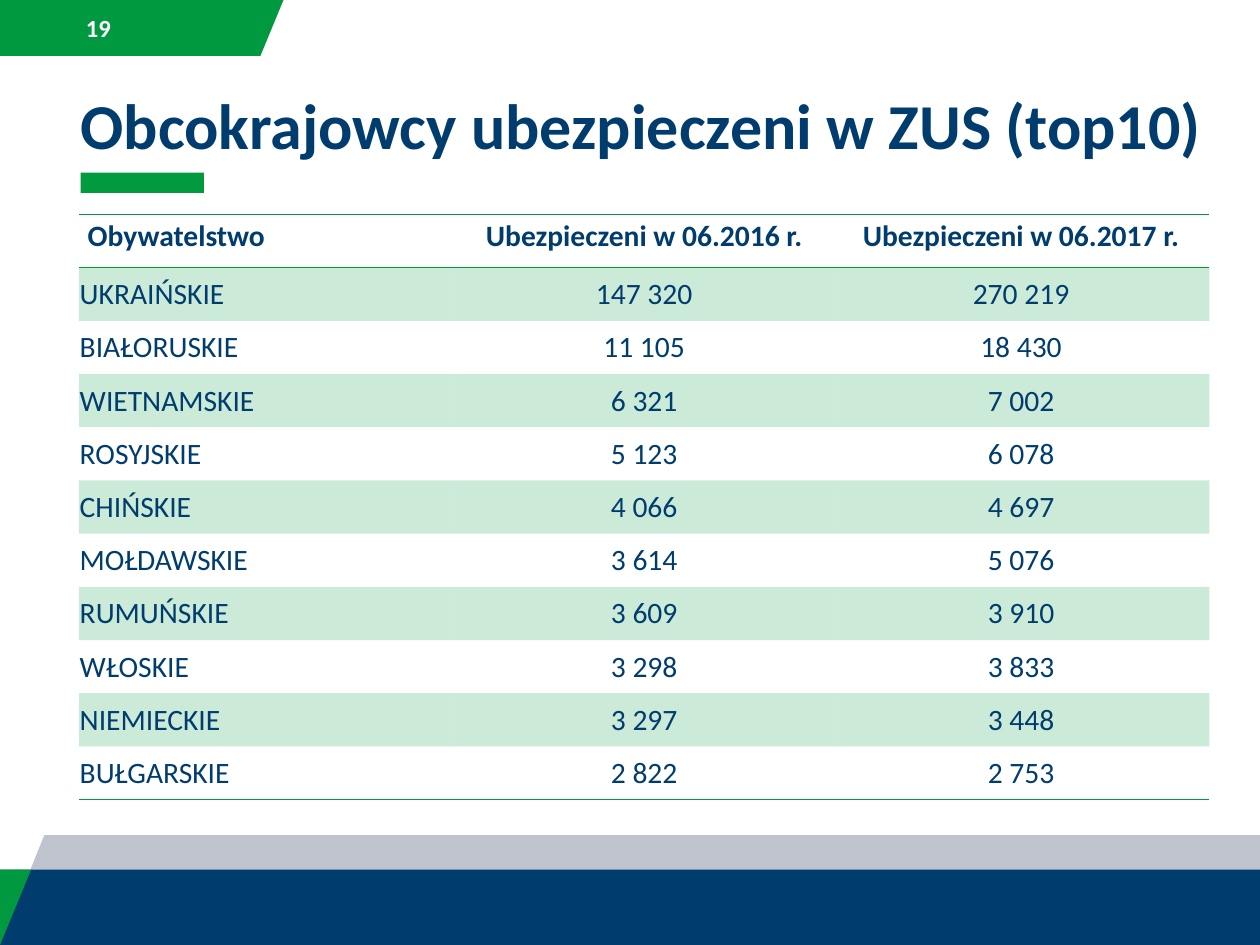
from lxml import etree
from pptx import Presentation
from pptx import util as u
from pptx.dml.color import RGBColor
from pptx.enum import shapes, text
from pptx.oxml import ns

In = u.Inches
W, H = 14.22, 10.67
COLORS = {"green": "00993F", "bar": "029A3F", "navy": "003D6E", "grey": "BEC3CE", "white": "FFFFFF"}
ROWS = [
    ("Obywatelstwo", "Ubezpieczeni w 06.2016 r.", "Ubezpieczeni w 06.2017 r."),
    ("UKRAIŃSKIE", "147 320", "270 219"),
    ("BIAŁORUSKIE", "11 105", "18 430"),
    ("WIETNAMSKIE", "6 321", "7 002"),
    ("ROSYJSKIE", "5 123", "6 078"),
    ("CHIŃSKIE", "4 066", "4 697"),
    ("MOŁDAWSKIE", "3 614", "5 076"),
    ("RUMUŃSKIE", "3 609", "3 910"),
    ("WŁOSKIE", "3 298", "3 833"),
    ("NIEMIECKIE", "3 297", "3 448"),
    ("BUŁGARSKIE", "2 822", "2 753"),
]


def paint(sp, color):
    """Give a shape a flat fill without line or shadow."""
    sp.shadow.inherit = False
    sp.fill.solid()
    sp.fill.fore_color.rgb = RGBColor.from_string(COLORS[color])
    sp.line.fill.background()


def add_rect(s, x, y, w, h, color):
    """Add a flat rectangle."""
    paint(s.shapes.add_shape(shapes.MSO_SHAPE.RECTANGLE, In(x), In(y), In(w), In(h)), color)


def add_polygon(s, points, color):
    """Add a flat closed outline through points in inches."""
    start, *rest = [(In(x), In(y)) for x, y in points]
    fb = s.shapes.build_freeform(*start, scale=1.0)
    fb.add_line_segments(rest, close=True)
    paint(fb.convert_to_shape(), color)


def add_run(p, words, size, color, bold=False):
    """Add one formatted run to a paragraph."""
    r = p.add_run()
    r.text = words
    r.font.name = "Calibri"
    r.font.size = u.Pt(size)
    r.font.bold = bold
    r.font.color.rgb = RGBColor.from_string(COLORS[color])


def add_page_tab(s, x, y, w, h, number):
    """Draw the slanted page tab and its number."""
    add_polygon(s, [(x, y), (x + w, y), (x + w - 0.26, y + h), (x, y + h)], "green")
    tf = s.shapes.add_textbox(In(x + 0.91), In(y + 0.09), In(0.85), In(0.45)).text_frame
    tf.word_wrap = True
    tf.vertical_anchor = text.MSO_ANCHOR.MIDDLE
    tf.margin_left = tf.margin_right = tf.margin_top = tf.margin_bottom = In(0.06)
    add_run(tf.paragraphs[0], number, 20, "white", True)


def add_footer(s, x, y, w, h):
    """Draw the grey, navy and green footer bands."""
    band, bottom = y + 0.39, y + h
    add_polygon(s, [(x, bottom), (x + 0.5, y), (x + w, y), (x + w, bottom)], "grey")
    add_rect(s, x, band, w, bottom - band, "navy")
    add_polygon(s, [(x, band), (x, bottom), (x + 0.35, band)], "green")


def add_title(s, x, y, w, h, words):
    """Place the title with its green underline bar."""
    sp = s.shapes.title
    sp.left, sp.top, sp.width, sp.height = In(x), In(y), In(w), In(h)
    tf = sp.text_frame
    tf.word_wrap = True
    tf.auto_size = text.MSO_AUTO_SIZE.NONE
    tf.vertical_anchor = text.MSO_ANCHOR.TOP
    p = tf.paragraphs[0]
    p.alignment = text.PP_ALIGN.LEFT
    p.line_spacing = 1.0
    add_run(p, words, 52, "navy", True)
    add_rect(s, x + 0.1, y + 1.03, 1.39, 0.23, "bar")


def set_borders(cell, top, bottom):
    """Rule a cell in green above or below and clear its other borders."""
    tcPr = cell._tc.get_or_add_tcPr()
    sides = [("a:lnL", False), ("a:lnR", False), ("a:lnT", top), ("a:lnB", bottom)]
    for i, (tag, ruled) in enumerate(sides):
        ln = etree.Element(ns.qn(tag), w=str(u.Pt(1)))
        fill = etree.SubElement(ln, ns.qn("a:solidFill" if ruled else "a:noFill"))
        if ruled:
            etree.SubElement(fill, ns.qn("a:srgbClr"), val=COLORS["green"])
        tcPr.insert(i, ln)


def fill_cell(cell, shaded):
    """Tint a cell with translucent green or leave it clear."""
    if not shaded:
        cell.fill.background()
        return
    cell.fill.solid()
    cell.fill.fore_color.rgb = RGBColor.from_string(COLORS["green"])
    clr = cell._tc.tcPr.find(".//" + ns.qn("a:srgbClr"))
    etree.SubElement(clr, ns.qn("a:alpha"), val="20000")


def add_table(s, x, y, w, h, rows):
    """Build the ruled table of insured foreigners."""
    n, cols = len(rows), len(rows[0])
    tbl = s.shapes.add_table(n, cols, In(x), In(y), In(w), In(h)).table
    tbl.horz_banding = False
    for i, row in enumerate(rows):
        for j, words in enumerate(row):
            cell = tbl.cell(i, j)
            fill_cell(cell, i % 2 == 1)
            set_borders(cell, i in (0, 1), i in (0, n - 1))
            if i:
                cell.vertical_anchor = text.MSO_ANCHOR.MIDDLE
                cell.margin_left = cell.margin_right = cell.margin_top = In(0.01)
                cell.margin_bottom = 0
            p = cell.text_frame.paragraphs[0]
            p.alignment = text.PP_ALIGN.CENTER if j else text.PP_ALIGN.LEFT
            add_run(p, words, 24, "navy", i == 0)


def main():
    """Build and save the slide."""
    prs = Presentation()
    prs.slide_width, prs.slide_height = In(W), In(H)
    s = prs.slides.add_slide(prs.slide_layouts[5])
    add_page_tab(s, 0, 0, 3.2, 0.63, "19")
    add_footer(s, 0, 9.43, W, H - 9.43)
    add_title(s, 0.81, 0.92, 12.91, 0.94, "Obcokrajowcy ubezpieczeni w ZUS (top10)")
    add_table(s, 0.89, 2.42, 12.76, 6.61, ROWS)
    prs.save("out.pptx")


if __name__ == "__main__":
    main()
